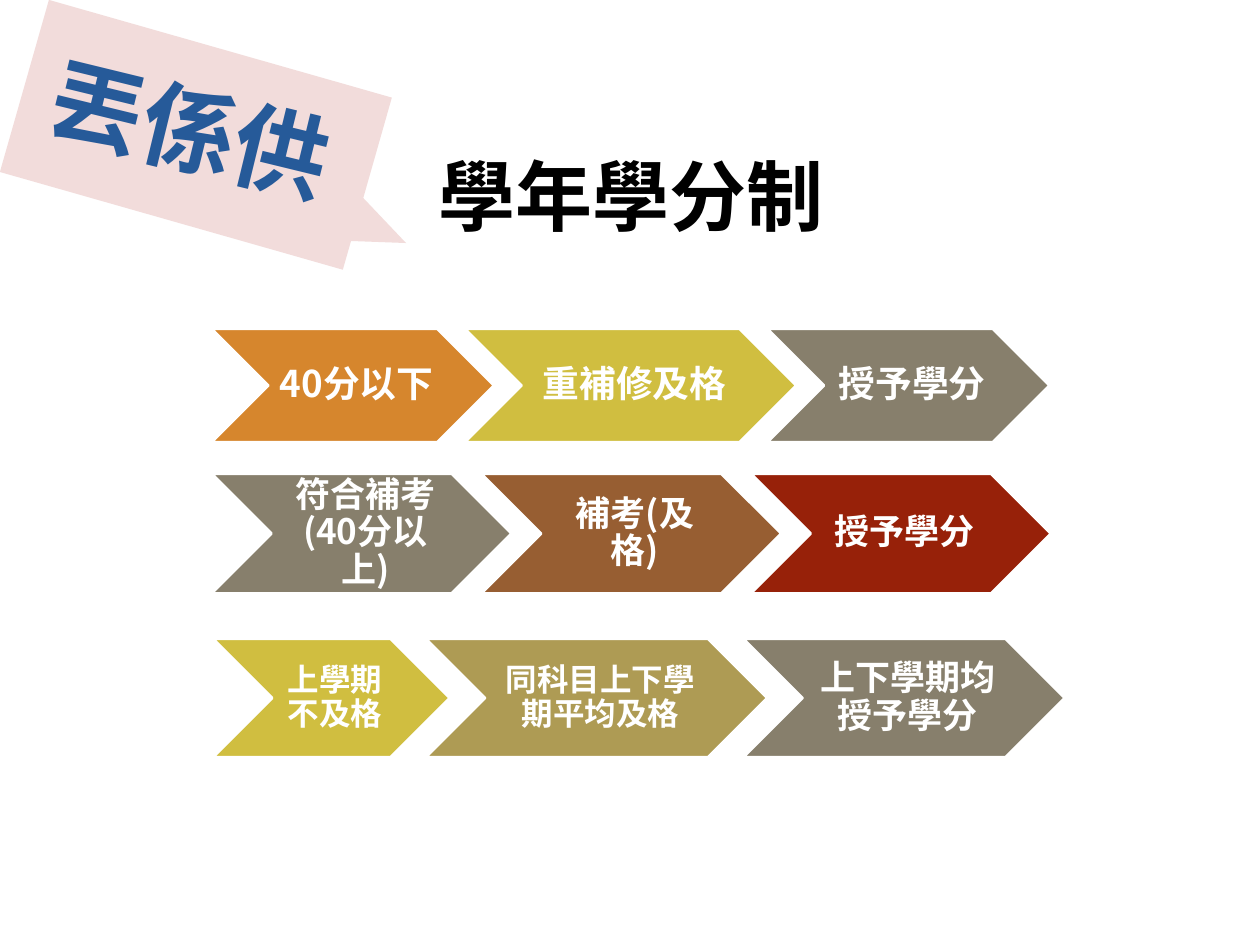
from lxml.etree import SubElement
from pptx import Presentation
from pptx.dml.color import RGBColor
from pptx.enum.shapes import MSO_SHAPE
from pptx.enum.text import MSO_ANCHOR, MSO_AUTO_SIZE, PP_ALIGN
from pptx.oxml.ns import qn
from pptx.util import Inches, Pt

FONT = "Noto Sans CJK SC"
BLACK = RGBColor(0x00, 0x00, 0x00)
WHITE = RGBColor(0xFF, 0xFF, 0xFF)
BLUE = RGBColor(0x26, 0x5A, 0x99)
PINK = RGBColor(0xF2, 0xDC, 0xDB)
TAUPE = RGBColor(0x87, 0x7F, 0x6C)
BROWN = RGBColor(0x97, 0x5E, 0x32)
RED = RGBColor(0x97, 0x21, 0x09)
ORANGE = RGBColor(0xD6, 0x86, 0x2D)
YELLOW = RGBColor(0xD0, 0xBE, 0x40)
OLIVE = RGBColor(0xAE, 0x9B, 0x54)

PROCESS_ROWS = [
    {"box": (1.68, 3.76, 0.95), "overlap": 0.24, "steps": [
        ("符合補考(40分以上)", 2.38, TAUPE, 20),
        ("補考(及格)", 2.38, BROWN, 20),
        ("授予學分", 2.38, RED, 20)]},
    {"box": (1.68, 2.61, 0.9), "overlap": 0.23, "steps": [
        ("40分以下", 2.24, ORANGE, 21),
        ("重補修及格", 2.63, YELLOW, 21),
        ("授予學分", 2.24, TAUPE, 21)]},
    {"box": (1.69, 5.07, 0.94), "overlap": 0.19, "steps": [
        ("上學期不及格", 1.88, YELLOW, 18),
        ("同科目上下學期平均及格", 2.71, OLIVE, 18),
        ("上下學期均 授予學分", 2.55, TAUPE, 20)]},
]


def set_attributes(target, values):
    """Set each named attribute on the target."""
    for name, value in values.items():
        setattr(target, name, value)


def write_text(shape, text, size, color, frame_format, paragraph_format):
    """Write one bold paragraph in the slide's font."""
    set_attributes(shape.text_frame, {"word_wrap": True, **frame_format})
    paragraph = shape.text_frame.paragraphs[0]
    set_attributes(paragraph, paragraph_format)
    run = paragraph.add_run()
    run.text = text
    set_attributes(run.font, {"name": FONT, "size": Pt(size), "bold": True})
    run.font.color.rgb = color
    properties = run.font._element
    SubElement(properties, qn("a:ea")).set("typeface", FONT)


def place_title(slide, box):
    """Place the slide title in the box."""
    title = slide.shapes.title
    set_attributes(title, dict(zip(("left", "top", "width", "height"), map(Inches, box))))
    write_text(title, "學年學分制", 44, BLACK,
               {"vertical_anchor": MSO_ANCHOR.MIDDLE}, {"alignment": PP_ALIGN.CENTER})


def add_callout(slide, box):
    """Add the tilted callout in the box."""
    callout = slide.shapes.add_shape(MSO_SHAPE.RECTANGULAR_CALLOUT, *map(Inches, box))
    callout.rotation = 15.9
    callout.adjustments[0] = 0.65
    callout.adjustments[1] = 0.26
    callout.shadow.inherit = False
    callout.fill.solid()
    callout.fill.fore_color.rgb = PINK
    callout.line.fill.background()


def add_callout_label(slide, box):
    """Add the tilted label of the callout in the box."""
    label = slide.shapes.add_textbox(*map(Inches, box))
    label.rotation = 13.7
    write_text(label, "丟係供", 54, BLUE,
               {"auto_size": MSO_AUTO_SIZE.SHAPE_TO_FIT_TEXT}, {"alignment": PP_ALIGN.LEFT})


def add_process_row(slide, box, overlap, steps):
    """Add a grouped row of overlapping chevrons from the box's left edge."""
    left, top, height = box
    group = slide.shapes.add_group_shape()
    for text, width, color, size in steps:
        chevron = group.shapes.add_shape(
            MSO_SHAPE.CHEVRON, *map(Inches, (left, top, width, height)))
        chevron.shadow.inherit = False
        chevron.fill.solid()
        chevron.fill.fore_color.rgb = color
        chevron.line.color.rgb = WHITE
        chevron.line.width = Pt(1.5)
        margin = Inches(0.03)
        write_text(chevron, text, size, WHITE,
                   {"vertical_anchor": MSO_ANCHOR.MIDDLE, "margin_left": Inches(0.09),
                    "margin_top": margin, "margin_right": margin, "margin_bottom": margin},
                   {"alignment": PP_ALIGN.CENTER, "line_spacing": 0.9})
        left += width - overlap


def main():
    """Build and save the slide."""
    presentation = Presentation()
    set_attributes(presentation, {"slide_width": Inches(10), "slide_height": Inches(7.5)})
    slide = presentation.slides.add_slide(presentation.slide_layouts[5])
    place_title(slide, (0.51, 0.92, 9, 1.25))
    add_callout(slide, (0.14, 0.36, 2.83, 1.42))
    for row in PROCESS_ROWS:
        add_process_row(slide, **row)
    add_callout_label(slide, (0.26, 0.71, 4.1, 1.01))
    presentation.save("out.pptx")


if __name__ == "__main__":
    main()
